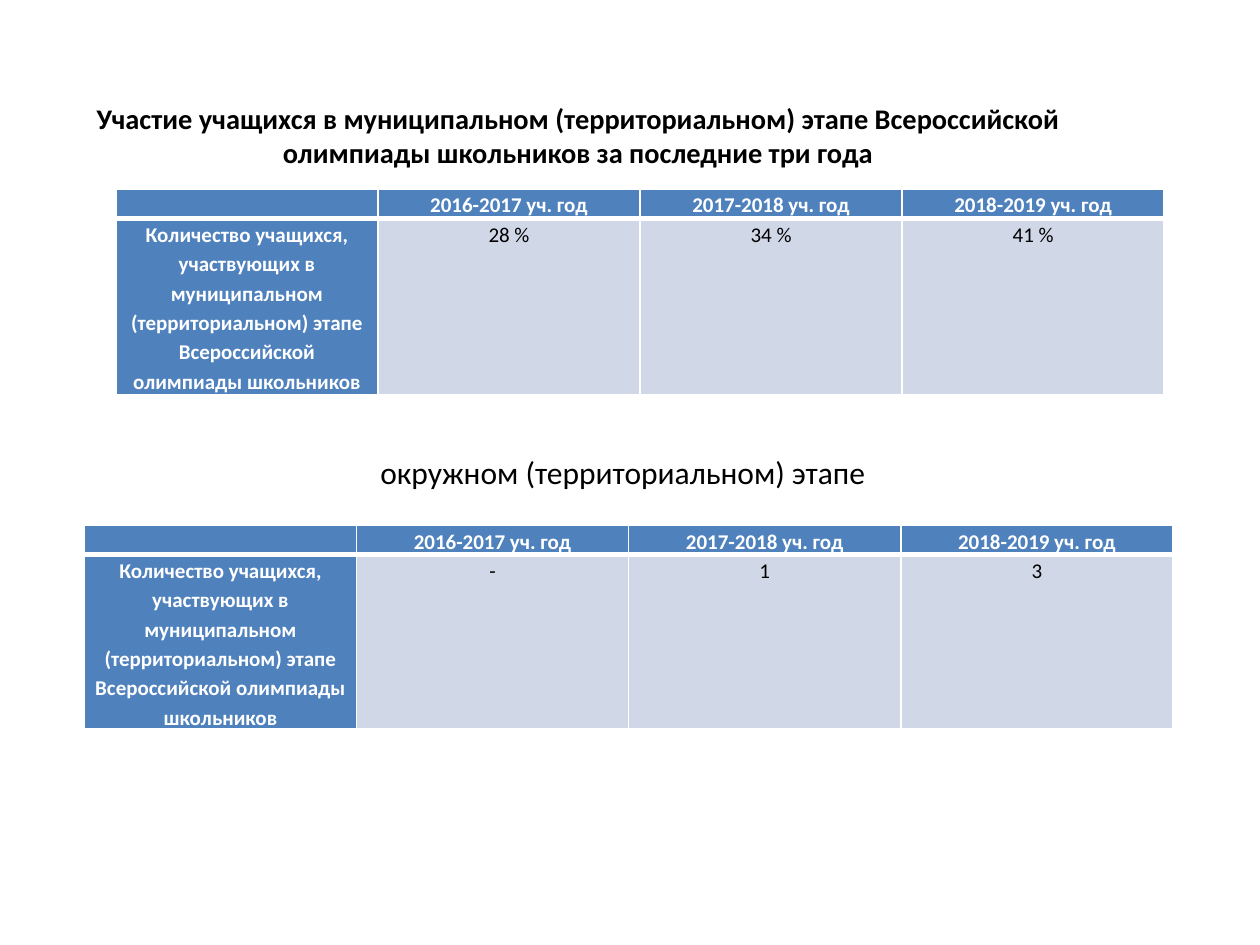
"""Build the slide on pupils' participation in the olympiad stages."""
from dataclasses import dataclass

from lxml.etree import SubElement
from pptx import Presentation
from pptx.dml.color import RGBColor
from pptx.enum.text import MSO_ANCHOR, PP_ALIGN
from pptx.oxml.ns import qn
from pptx.slide import Slide
from pptx.table import _Cell
from pptx.text.text import _Paragraph
from pptx.util import Inches, Pt

CENTER = PP_ALIGN.CENTER
MIDDLE = MSO_ANCHOR.MIDDLE
FONT = "Calibri"
COLORS = {"header": "4F81BD", "body": "D0D8E8", "white": "FFFFFF", "black": "000000"}
YEARS = ("2016-2017 уч. год", "2017-2018 уч. год", "2018-2019 уч. год")
ROW_LABEL = (
    "Количество учащихся, участвующих в муниципальном (территориальном) "
    "этапе Всероссийской олимпиады школьников"
)
ROW_HEIGHTS = (0.23, 1.38)


@dataclass(frozen=True)
class StageTable:
    """Place and values of one olympiad stage table."""

    left: float
    top: float
    column_width: float
    values: tuple[str, ...]


STAGES = (
    StageTable(0.92, 1.5, 2.08, ("28 %", "34 %", "41 %")),
    StageTable(0.67, 4.17, 2.16, ("-", "1", "3")),
)


def format_runs(para: _Paragraph, size: float, color: str, bold: bool) -> None:
    """Set the font of every run in a paragraph."""
    for span in para.runs:
        span.font.name = FONT
        span.font.size = Pt(size)
        span.font.bold = bold
        span.font.color.rgb = RGBColor.from_string(COLORS[color])


def add_borders(cell: _Cell, widths: dict[str, int]) -> None:
    """Put white lines of the given point widths ahead of the cell fill."""
    properties = cell._tc.get_or_add_tcPr()
    for index, (side, width) in enumerate(widths.items()):
        line = SubElement(properties, qn(f"a:{side}"), w=str(Pt(width)))
        fill = SubElement(line, qn("a:solidFill"))
        SubElement(fill, qn("a:srgbClr"), val=COLORS["white"])
        properties.insert(index, line)


def fill_cell(cell: _Cell, text: str, is_header: bool, is_label: bool) -> None:
    """Write and style one table cell."""
    strong = is_header or is_label
    cell.margin_left = cell.margin_right = Inches(0.07)
    cell.margin_top = cell.margin_bottom = 0
    cell.fill.solid()
    cell.fill.fore_color.rgb = RGBColor.from_string(COLORS["header" if strong else "body"])
    add_borders(cell, {"lnL": 1, "lnR": 1, "lnT": 1 if is_header else 3, "lnB": 3 if is_header else 1})
    para = cell.text_frame.paragraphs[0]
    para.alignment = CENTER
    para.line_spacing = 1.15
    if text:
        para.text = text
        format_runs(para, 12, "white" if strong else "black", strong)
    else:
        SubElement(para._p, qn("a:endParaRPr"), sz="1200")


def add_stage_table(page: Slide, stage: StageTable) -> None:
    """Add one stage table to the page."""
    rows = (("", *YEARS), (ROW_LABEL, *stage.values))
    width = stage.column_width * len(rows[0])
    table = page.shapes.add_table(
        len(rows), len(rows[0]), Inches(stage.left), Inches(stage.top),
        Inches(width), Inches(sum(ROW_HEIGHTS)),
    ).table
    for column in table.columns:
        column.width = Inches(stage.column_width)
    for row_index, texts in enumerate(rows):
        table.rows[row_index].height = Inches(ROW_HEIGHTS[row_index])
        for column_index, text in enumerate(texts):
            fill_cell(table.cell(row_index, column_index), text, row_index == 0, column_index == 0)


def add_title(page: Slide) -> None:
    """Place and format the title placeholder."""
    title = page.shapes.title
    title.left, title.top = Inches(0.5), Inches(0.83)
    title.width, title.height = Inches(8.17), Inches(0.72)
    frame = title.text_frame
    frame.text = (
        "Участие учащихся в муниципальном (территориальном) этапе "
        "Всероссийской олимпиады школьников за последние три года"
    )
    frame.vertical_anchor = MIDDLE
    frame.margin_top, frame.margin_bottom = 0, Inches(0.24)
    frame.paragraphs[0].alignment = CENTER
    format_runs(frame.paragraphs[0], 16.2, "black", True)


def add_stage_heading(page: Slide) -> None:
    """Add the heading above the second table."""
    box = page.shapes.add_textbox(Inches(2.92), Inches(3.55), Inches(4.16), Inches(0.4))
    box.text_frame.word_wrap = False
    box.text_frame.text = "окружном (территориальном) этапе"
    format_runs(box.text_frame.paragraphs[0], 18, "black", False)


def main() -> None:
    """Create and save the deck."""
    deck = Presentation()
    deck.slide_width, deck.slide_height = Inches(10), Inches(7.5)
    page = deck.slides.add_slide(deck.slide_layouts.get_by_name("Title Only"))
    add_title(page)
    add_stage_table(page, STAGES[0])
    add_stage_heading(page)
    add_stage_table(page, STAGES[1])
    deck.save("out.pptx")


if __name__ == "__main__":
    main()
